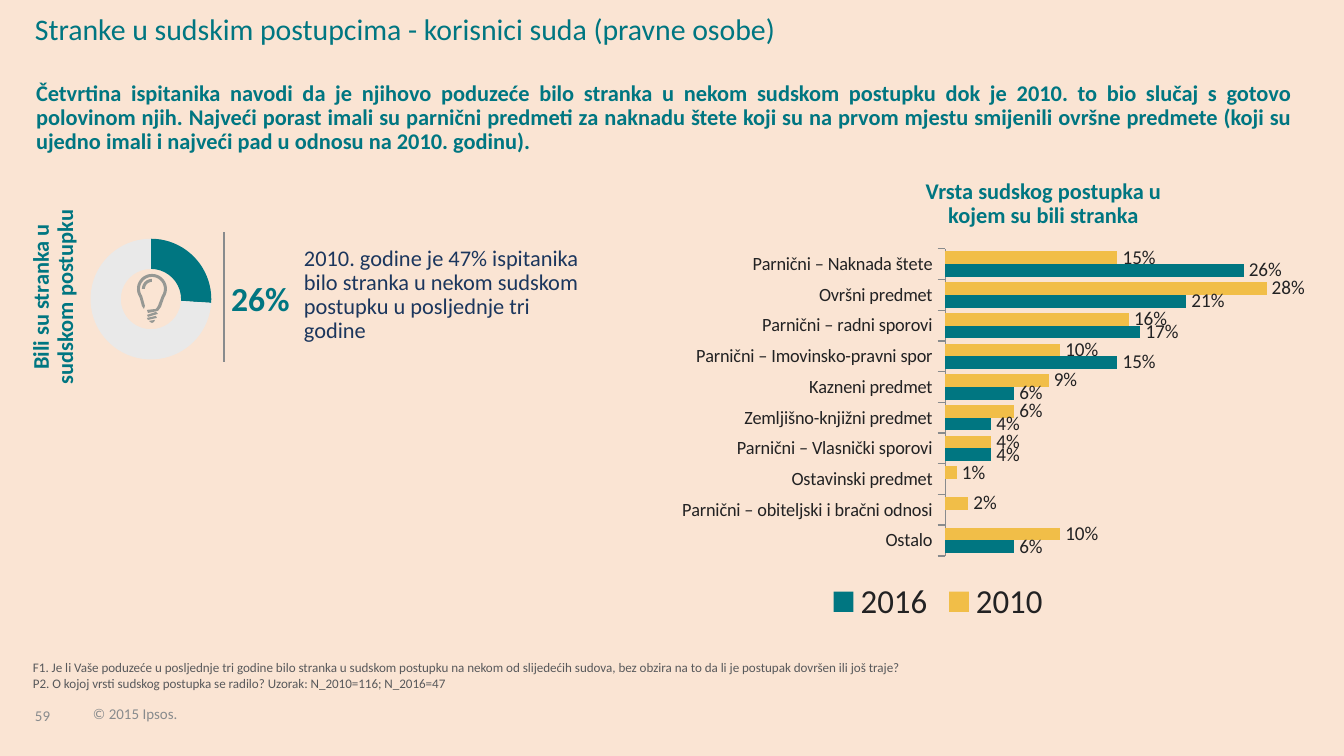
import math
import pptx
import pptx.util
import pptx.dml.color
import pptx.chart.data
import pptx.enum.chart
import pptx.enum.text
import pptx.enum.shapes
import pptx.oxml

SCALE = 914400 / 134.4
FONT = "Calibri"
TEAL, GOLD, PALE, INK, GREY = "007681", "F1BE48", "E9E9E9", "222223", "888B8D"
ALIGN = pptx.enum.text.PP_ALIGN
ANCHOR = pptx.enum.text.MSO_ANCHOR
CHART = pptx.enum.chart

HEADING = {"size": 12, "color": TEAL, "bold": True}
FOOTER = {"size": 8, "color": GREY}
INSET = (13, 7)

TEXTS = [
    {"box": (35, 690, 46, 35), "lines": ["59"], "font": FOOTER, "spacing": 0.85,
     "anchor": ANCHOR.BOTTOM, "wrap": False},
    {"box": (93, 699, 102, 24), "lines": ["© 2015 Ipsos."], "font": FOOTER, "spacing": 0.85,
     "anchor": ANCHOR.BOTTOM, "wrap": False},
    {"box": (33, 664, 1235, 27), "font": {"size": 7, "color": "58595B"}, "anchor": ANCHOR.BOTTOM,
     "lines": [
         "F1. Je li Vaše poduzeće u posljednje tri godine bilo stranka u sudskom postupku na nekom od "
         "slijedećih sudova, bez obzira na to da li je postupak dovršen ili još traje?",
         "P2. O kojoj vrsti sudskog postupka se radilo? Uzorak: N_2010=116; N_2016=47"]},
    {"box": (23, 75, 1283, 87), "font": HEADING, "align": ALIGN.JUSTIFY, "spacing": 0.9, "inset": INSET,
     "lines": [
         "Četvrtina ispitanika navodi da je njihovo poduzeće bilo stranka u nekom sudskom postupku dok je "
         "2010. to bio slučaj s gotovo polovinom njih. Najveći porast imali su parnični predmeti za naknadu "
         "štete koji su na prvom mjestu smijenili ovršne predmete (koji su ujedno imali i najveći pad u "
         "odnosu na 2010. godinu)."]},
    {"box": (35, 15, 1043, 73), "font": {"size": 16, "color": TEAL}, "spacing": 0.9,
     "lines": ["Stranke u sudskim postupcima - korisnici suda (pravne osobe)"]},
    {"box": (-35, 271, 181, 52), "font": HEADING, "align": ALIGN.CENTER, "spacing": 0.9, "rotation": 270,
     "lines": ["Bili su stranka u sudskom postupku"]},
    {"box": (304, 247, 285, 103), "font": {"size": 12, "color": "1B365D"}, "spacing": 0.9,
     "lines": ["2010. godine je 47% ispitanika bilo stranka u nekom sudskom postupku u posljednje tri godine"]},
    {"box": (218, 271, 86, 54), "font": {"size": 18, "color": TEAL, "bold": True}, "inset": INSET,
     "wrap": False, "lines": ["26%"]},
    {"box": (905, 180, 277, 52), "font": HEADING, "align": ALIGN.CENTER, "spacing": 0.9,
     "lines": ["Vrsta sudskog postupka u kojem su bili stranka"]},
]

PARTICIPATION = [("1", 26, TEAL), ("2", 74, PALE)]
CASES = [
    ("Parnični – Naknada štete", 0.15, 0.26),
    ("Ovršni predmet", 0.28, 0.21),
    ("Parnični – radni sporovi", 0.16, 0.17),
    ("Parnični – Imovinsko-pravni spor", 0.10, 0.15),
    ("Kazneni predmet", 0.09, 0.06),
    ("Zemljišno-knjižni predmet", 0.06, 0.04),
    ("Parnični – Vlasnički sporovi", 0.04, 0.04),
    ("Ostavinski predmet", 0.01, None),
    ("Parnični – obiteljski i bračni odnosi", 0.02, None),
    ("Ostalo", 0.10, 0.06),
]
YEARS = [("2010", GOLD), ("2016", TEAL)]


def px(value):
    return round(value * SCALE)


def place(box):
    return [px(value) for value in box]


def rgb(color):
    return pptx.dml.color.RGBColor.from_string(color)


def paint(fill, color):
    fill.solid()
    fill.fore_color.rgb = rgb(color)


def set_font(font, size, color, bold=False):
    for name, value in {"name": FONT, "size": pptx.util.Pt(size), "bold": bold}.items():
        setattr(font, name, value)
    font.color.rgb = rgb(color)


def add_text(slide, item):
    shape = slide.shapes.add_textbox(*place(item["box"]))
    shape.rotation = item.get("rotation", 0)
    frame = shape.text_frame
    side, top = item.get("inset", (0, 0))
    settings = {
        "margin_left": px(side), "margin_right": px(side),
        "margin_top": px(top), "margin_bottom": px(top),
        "word_wrap": item.get("wrap", True),
        "vertical_anchor": item.get("anchor", ANCHOR.TOP),
    }
    for name, value in settings.items():
        setattr(frame, name, value)
    for index, line in enumerate(item["lines"]):
        paragraph = frame.add_paragraph() if index else frame.paragraphs[0]
        paragraph.alignment = item.get("align", ALIGN.LEFT)
        paragraph.line_spacing = item.get("spacing", 1.0)
        run = paragraph.add_run()
        run.text = line
        set_font(run.font, **item["font"])


def add_chart(slide, kind, box, data, plot_box):
    chart = slide.shapes.add_chart(kind, *place(box), data).chart
    chart.has_title = False
    set_font(chart.font, 18, INK)
    plot_area = chart.plots[0]._element.getparent()
    for old in plot_area.findall(pptx.oxml.ns.qn("c:layout")):
        plot_area.remove(old)
    sizes = "".join(f'<c:{tag} val="{value}"/>' for tag, value in zip("xywh", plot_box))
    plot_area.insert(0, pptx.oxml.parse_xml(
        f'<c:layout {pptx.oxml.ns.nsdecls("c")}><c:manualLayout><c:layoutTarget val="inner"/>'
        f'<c:xMode val="edge"/><c:yMode val="edge"/>{sizes}</c:manualLayout></c:layout>'))
    return chart


def add_participation(slide):
    data = pptx.chart.data.CategoryChartData()
    data.categories = [name for name, value, color in PARTICIPATION]
    data.add_series("Series 1", [value for name, value, color in PARTICIPATION])
    chart = add_chart(slide, CHART.XL_CHART_TYPE.DOUGHNUT, (59, 226, 184, 183), data,
                      (0.04, 0.07, 0.92, 0.66))
    chart.has_legend = False
    plot = chart.plots[0]
    plot._element.find(pptx.oxml.ns.qn("c:holeSize")).set("val", "80")
    for index, (name, value, color) in enumerate(PARTICIPATION):
        point = plot.series[0].points[index]
        paint(point.format.fill, color)
        point.format.line.fill.background()


def add_cases(slide):
    data = pptx.chart.data.CategoryChartData(number_format="###0%")
    data.categories = [case[0] for case in CASES]
    for index, (year, color) in enumerate(YEARS, 1):
        data.add_series(year, [case[index] for case in CASES])
    chart = add_chart(slide, CHART.XL_CHART_TYPE.BAR_CLUSTERED, (587, 245, 718, 384), data,
                      (0.52, 0.01, 0.49, 0.8))
    chart.has_legend = True
    chart.legend.position = CHART.XL_LEGEND_POSITION.BOTTOM
    chart.legend.include_in_layout = False
    set_font(chart.legend.font, 18, INK)
    chart.value_axis.visible = False
    chart.value_axis.has_major_gridlines = False
    axis = chart.category_axis
    axis.reverse_order = True
    axis.major_tick_mark = CHART.XL_TICK_MARK.OUTSIDE
    axis.format.line.color.rgb = rgb(GREY)
    set_font(axis.tick_labels.font, 10, INK)
    plot = chart.plots[0]
    for name, value in {"gap_width": 42, "overlap": 0, "vary_by_categories": False}.items():
        setattr(plot, name, value)
    for series, (year, color) in zip(plot.series, YEARS):
        paint(series.format.fill, color)
        labels = series.data_labels
        settings = {"show_value": True, "number_format": "###0%", "number_format_is_linked": False,
                    "position": CHART.XL_LABEL_POSITION.OUTSIDE_END}
        for name, value in settings.items():
            setattr(labels, name, value)
        set_font(labels.font, 10.5, INK)


def arc(radius, start, end, steps=24):
    angles = [math.radians(start + (end - start) * step / steps) for step in range(steps + 1)]
    return [(152 + radius * math.cos(angle), 289 + radius * math.sin(angle)) for angle in angles]


def add_bulb(slide):
    glass = (arc(15, 145, 395) + [(161, 307), (158, 311), (148, 313), (147, 310), (156, 309), (158, 306)]
             + arc(12, 395, 145) + [(145, 306), (144, 309), (142, 306)])
    glare = arc(10, 180, 270) + arc(7, 270, 180)
    upper_thread = [(147, 315), (156, 312), (158, 314), (148, 317)]
    lower_thread = [(147, 318), (156, 316), (157, 318), (148, 320)]
    tip = [(149, 321), (155, 320), (154, 322), (152, 323), (150, 322)]
    builder = None
    for contour in (glass, glare, upper_thread, lower_thread, tip):
        points = [place(point) for point in contour]
        if builder is None:
            builder = slide.shapes.build_freeform(*points[0])
        else:
            builder.move_to(*points[0])
        builder.add_line_segments(points[1:], close=True)
    shape = builder.convert_to_shape()
    shape.shadow.inherit = False
    paint(shape.fill, "969894")
    shape.line.fill.background()


def add_divider(slide):
    connector = slide.shapes.add_connector(
        pptx.enum.shapes.MSO_CONNECTOR.STRAIGHT, *place((224, 362, 224, 232)))
    connector.line.color.rgb = rgb(GREY)
    connector.line.width = pptx.util.Pt(0.75)
    connector._element.spPr.append(pptx.oxml.parse_xml(f'<a:effectLst {pptx.oxml.ns.nsdecls("a")}/>'))


def main():
    presentation = pptx.Presentation()
    presentation.slide_width, presentation.slide_height = place((1344, 756))
    slide = presentation.slides.add_slide(presentation.slide_layouts[6])
    paint(slide.background.fill, "FAE4D3")
    add_participation(slide)
    add_bulb(slide)
    add_divider(slide)
    add_cases(slide)
    for item in TEXTS:
        add_text(slide, item)
    presentation.save("out.pptx")


if __name__ == "__main__":
    main()
